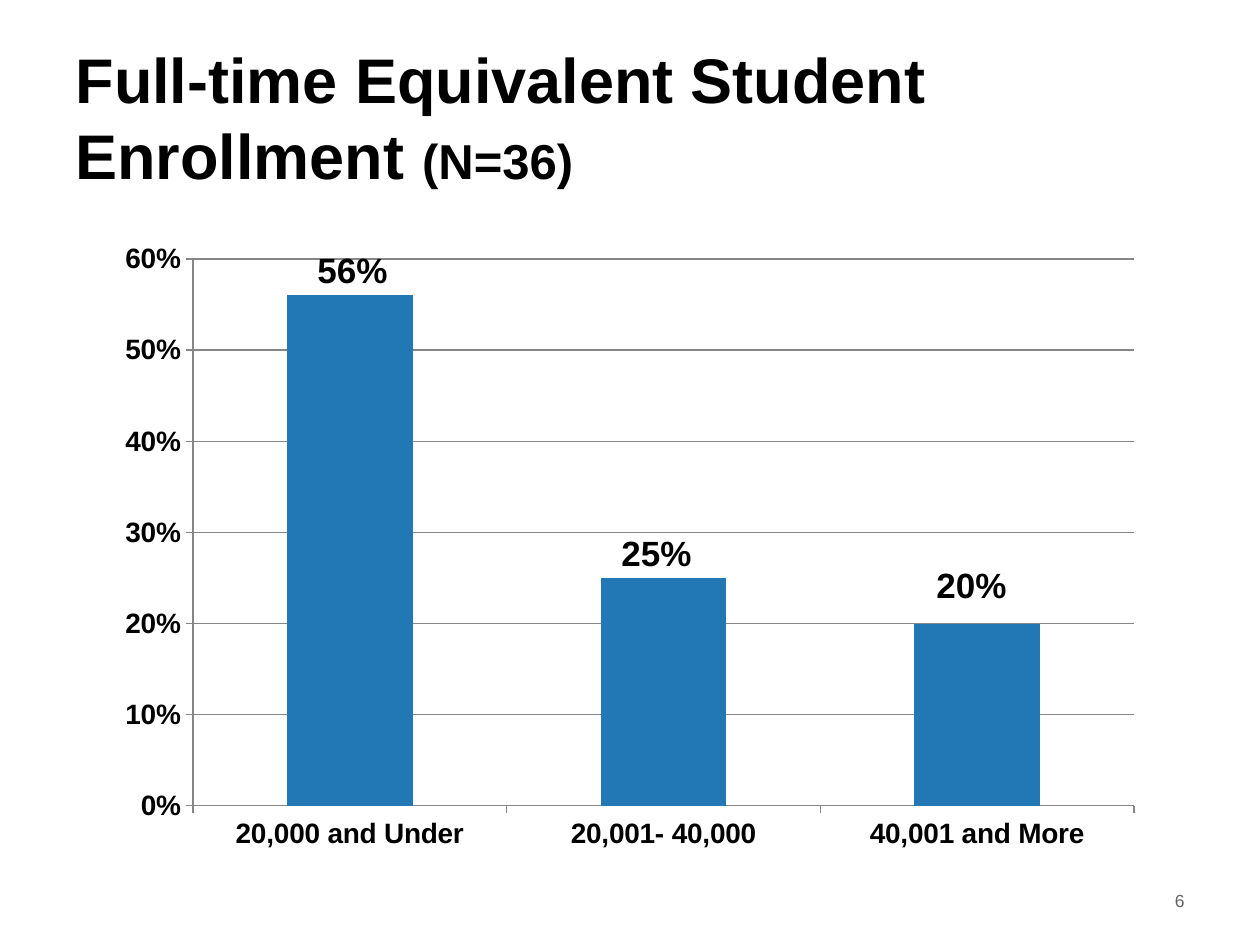
"""Build the slide on full-time equivalent student enrollment."""
from lxml import etree
from pptx import Presentation
from pptx.chart.data import CategoryChartData
from pptx.dml.color import RGBColor
from pptx.enum.chart import XL_CHART_TYPE, XL_TICK_MARK
from pptx.enum.text import MSO_ANCHOR, MSO_AUTO_SIZE, PP_ALIGN
from pptx.oxml.ns import qn
from pptx.util import Pt

COLUMNS = XL_CHART_TYPE.COLUMN_CLUSTERED
OUTSIDE = XL_TICK_MARK.OUTSIDE
TOP, MIDDLE = MSO_ANCHOR.TOP, MSO_ANCHOR.MIDDLE
NO_FIT = MSO_AUTO_SIZE.NONE
LEFT, RIGHT = PP_ALIGN.LEFT, PP_ALIGN.RIGHT
PX = 914400 / 126

TITLE = [("Full-time Equivalent Student Enrollment ", 36), ("(N=36)", 28)]
TITLE_BOX = (63, 38, 1134, 157)
ENROLLMENT = [("20,000 and Under", 0.56), ("20,001- 40,000", 0.25), ("40,001 and More", 0.2)]
CHART_BOX = (105, 231, 1050, 630)
PLOT_BOX = (193, 259, 941, 547)
SHARE_BOXES = [(305, 242, 136, 55), (609, 525, 126, 55), (924, 557, 136, 55)]
PAGE_NUMBER = "6"
PAGE_BOX = (903, 876, 294, 50)
BLACK, GRAY, BLUE, RULE = "000000", "646464", "2178B5", "868686"


def emu(box):
    return [round(length * PX) for length in box]


def rgb(value):
    return RGBColor.from_string(value)


def style(font, size, color=BLACK, bold=True):
    for name, value in {"name": "Arial", "size": Pt(size), "bold": bold}.items():
        setattr(font, name, value)
    font.color.rgb = rgb(color)


def write(frame, runs, align=LEFT, anchor=TOP, **look):
    for name, value in {"word_wrap": True, "auto_size": NO_FIT, "vertical_anchor": anchor}.items():
        setattr(frame, name, value)
    paragraph = frame.paragraphs[0]
    paragraph.alignment = align
    for text, size in runs:
        run = paragraph.add_run()
        run.text = text
        style(run.font, size, **look)


def rule(line):
    line.color.rgb = rgb(RULE)
    line.width = Pt(0.75)


def place_plot(chart):
    plot_area = chart.plots[0]._element.getparent()
    layout = plot_area.find(qn("c:layout"))
    if layout is None:
        layout = etree.Element(qn("c:layout"))
        plot_area.insert(0, layout)
    manual = etree.SubElement(layout, qn("c:manualLayout"))
    left, top, width, height = CHART_BOX
    x, y, w, h = PLOT_BOX
    values = {"layoutTarget": "inner", "xMode": "edge", "yMode": "edge",
              "x": (x - left) / width, "y": (y - top) / height,
              "w": w / width, "h": h / height}
    for tag, value in values.items():
        etree.SubElement(manual, qn(f"c:{tag}")).set("val", str(value))


def add_enrollment_chart(slide):
    data = CategoryChartData(number_format="0%")
    data.categories = [band for band, share in ENROLLMENT]
    data.add_series("Series 1", [share for band, share in ENROLLMENT])
    chart = slide.shapes.add_chart(COLUMNS, *emu(CHART_BOX), data).chart
    chart.has_legend = chart.has_title = False
    chart.font.name, chart.font.size = "Times New Roman", Pt(10)
    chart.font.color.rgb = rgb(BLACK)
    columns = chart.plots[0]
    columns.gap_width, columns.vary_by_categories = 150, False
    fill = columns.series[0].format.fill
    fill.solid()
    fill.fore_color.rgb = rgb(BLUE)
    for axis in (chart.category_axis, chart.value_axis):
        axis.major_tick_mark = OUTSIDE
        style(axis.tick_labels.font, 16)
        rule(axis.format.line)
    shares = chart.value_axis
    scale = {"minimum_scale": 0, "maximum_scale": 0.6, "major_unit": 0.1, "has_major_gridlines": True}
    for name, value in scale.items():
        setattr(shares, name, value)
    shares.tick_labels.number_format = "0%"
    shares.tick_labels.number_format_is_linked = False
    rule(shares.major_gridlines.format.line)
    place_plot(chart)


def main():
    deck = Presentation()
    deck.slide_width, deck.slide_height = emu((1260, 945))
    slide = deck.slides.add_slide(deck.slide_layouts[5])
    title = slide.shapes.title
    title.left, title.top, title.width, title.height = emu(TITLE_BOX)
    write(title.text_frame, TITLE, anchor=MIDDLE)
    page = slide.shapes.add_textbox(*emu(PAGE_BOX))
    write(page.text_frame, [(PAGE_NUMBER, 10)], RIGHT, MIDDLE, color=GRAY, bold=False)
    add_enrollment_chart(slide)
    for (band, share), box in zip(ENROLLMENT, SHARE_BOXES):
        label = slide.shapes.add_textbox(*emu(box))
        write(label.text_frame, [(f"{share:.0%}", 20)])
    deck.save("out.pptx")


if __name__ == "__main__":
    main()
